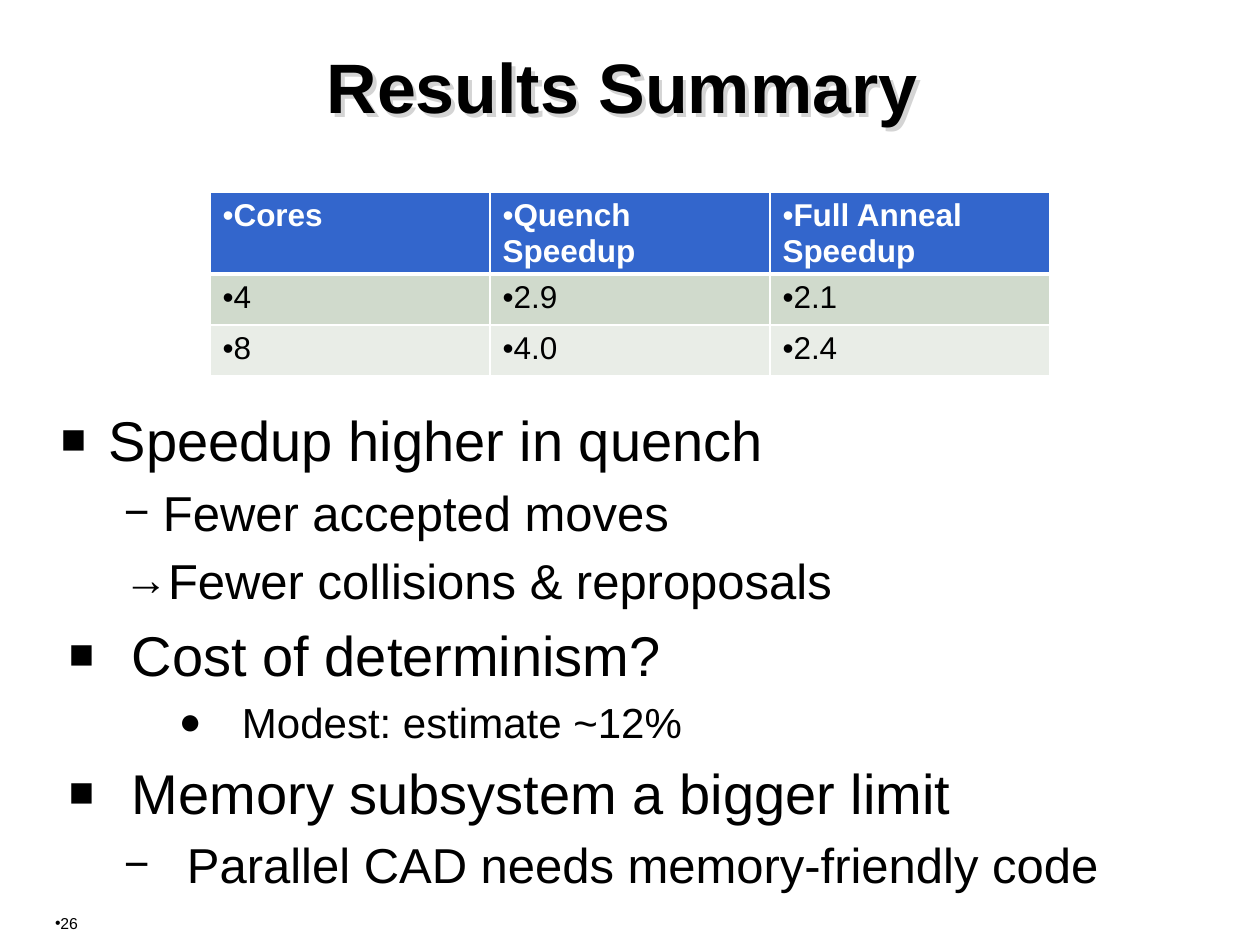
from dataclasses import dataclass
from typing import Any

from lxml import etree
from pptx import Presentation
from pptx.dml.color import RGBColor
from pptx.enum import text
from pptx.oxml import ns
from pptx.util import Pt

PX = 914400 / 126
FONT = "Arial"
BLACK = RGBColor(0x00, 0x00, 0x00)
WHITE = RGBColor(0xFF, 0xFF, 0xFF)
BLUE = RGBColor(0x33, 0x66, 0xCC)
SAGE = RGBColor(0xD0, 0xDA, 0xCC)
PALE = RGBColor(0xE9, 0xED, 0xE7)
SHADOW = RGBColor(0xD4, 0xD4, 0xD4)
SPACE_BEFORE = {32: 6.5, 28: 5.25, 24: 5}


@dataclass
class Bullet:
    char: str
    size: int = 100
    margin: int = 0
    hang: int = 0


@dataclass
class Point:
    text: str
    pt: int
    bullet: Bullet
    level: int = 0


@dataclass
class Row:
    cells: tuple[str, ...]
    height: int
    fill: RGBColor
    color: RGBColor = BLACK
    bold: bool = False
    bottom: int = 1


POINTS = [
    Point("Speedup higher in quench", 32, Bullet("■", 75, 48, 48)),
    Point("Fewer accepted moves", 28, Bullet("−", 90, 102, 39), 1),
    Point("Fewer collisions & reproposals", 28, Bullet("→", 90, 102, 39), 1),
    Point("Cost of determinism?", 32, Bullet("■", 75, 71, 63)),
    Point("Modest: estimate ~12%", 24, Bullet("●", 90, 181, 63), 2),
    Point("Memory subsystem a bigger limit", 32, Bullet("■", 75, 71, 63)),
    Point("Parallel CAD needs memory-friendly code", 28, Bullet("−", 90, 126, 63), 1),
]
ROWS = [
    Row(("Cores", "Quench Speedup", "Full Anneal Speedup"), 81, BLUE, WHITE, True, 3),
    Row(("4", "2.9", "2.1"), 51, SAGE),
    Row(("8", "4.0", "2.4"), 51, PALE),
]


def emu(px: float) -> int:
    return round(px * PX)


def add_child(parent: Any, tag: str, **attrs: Any) -> Any:
    values = {name: str(value) for name, value in attrs.items()}
    return etree.SubElement(parent, ns.qn(tag), values)


def add_text(p: Any, words: str, pt: int, color: RGBColor = BLACK, bold: bool = False) -> None:
    r = p.add_run()
    r.text = words
    for name, value in {"name": FONT, "size": Pt(pt), "bold": bold}.items():
        setattr(r.font, name, value)
    r.font.color.rgb = color


def add_bullet(p: Any, bullet: Bullet) -> None:
    pPr = p._p.get_or_add_pPr()
    pPr.set("marL", str(emu(bullet.margin)))
    pPr.set("indent", str(-emu(bullet.hang)))
    add_child(pPr, "a:buSzPct", val=bullet.size * 1000)
    add_child(pPr, "a:buFont", typeface=FONT)
    add_child(pPr, "a:buChar", char=bullet.char)


def add_box(slide: Any, x: int, y: int, w: int, h: int, inset_top: int = 6) -> Any:
    sp = slide.shapes.add_textbox(*map(emu, (x, y, w, h)))
    tf = sp.text_frame
    margins = {"margin_left": 12, "margin_right": 12, "margin_top": inset_top, "margin_bottom": 0}
    for name, px in margins.items():
        setattr(tf, name, emu(px))
    tf.word_wrap = True
    return sp


def add_shadow(sp: Any) -> None:
    """Cast a hard shadow from the text of an unfilled box."""
    effects = add_child(sp._element.spPr, "a:effectLst")
    shadow = add_child(effects, "a:outerShdw", dist=38100, dir=2700000, algn="tl", rotWithShape=0)
    add_child(shadow, "a:srgbClr", val=SHADOW)


def add_borders(cell: Any, bottom: int, top: int) -> None:
    tcPr = cell._tc.get_or_add_tcPr()
    for side, width in {"L": 1, "R": 1, "T": top, "B": bottom}.items():
        line = add_child(tcPr, f"a:ln{side}", w=Pt(width))
        add_child(add_child(line, "a:solidFill"), "a:srgbClr", val=WHITE)


def add_results_table(slide: Any, x: int, y: int, col_width: int) -> None:
    n_cols = len(ROWS[0].cells)
    height = sum(row.height for row in ROWS)
    frame = slide.shapes.add_table(len(ROWS), n_cols, *map(emu, (x, y, col_width * n_cols, height)))
    table = frame.table
    for col in table.columns:
        col.width = emu(col_width)
    top = 1
    for i, row in enumerate(ROWS):
        table.rows[i].height = emu(row.height)
        for j, words in enumerate(row.cells):
            cell = table.cell(i, j)
            cell.margin_bottom = 0
            add_borders(cell, row.bottom, top)
            cell.fill.solid()
            cell.fill.fore_color.rgb = row.fill
            p = cell.text_frame.paragraphs[0]
            add_bullet(p, Bullet("•"))
            add_text(p, words, 18, row.color, row.bold)
        top = row.bottom


def add_points(tf: Any) -> None:
    for i, point in enumerate(POINTS):
        p = tf.add_paragraph() if i else tf.paragraphs[0]
        p.level = point.level
        p.space_before = Pt(SPACE_BEFORE[point.pt] if i else 0)
        add_bullet(p, point.bullet)
        add_text(p, point.text, point.pt)


def main() -> None:
    prs = Presentation()
    prs.slide_width, prs.slide_height = emu(1260), emu(945)
    slide = prs.slides.add_slide(prs.slide_layouts[6])

    add_points(add_box(slide, 49, 406, 1148, 489, inset_top=0).text_frame)

    number = add_box(slide, 43, 908, 96, 37).text_frame.paragraphs[0]
    add_bullet(number, Bullet("•"))
    add_text(number, "26", 9)

    title = add_box(slide, 48, 38, 1148, 126)
    add_shadow(title)
    p = title.text_frame.paragraphs[0]
    p.alignment = text.PP_ALIGN.CENTER
    add_text(p, "Results Summary", 40, bold=True)

    add_results_table(slide, 210, 192, 280)
    prs.save("out.pptx")


if __name__ == "__main__":
    main()
